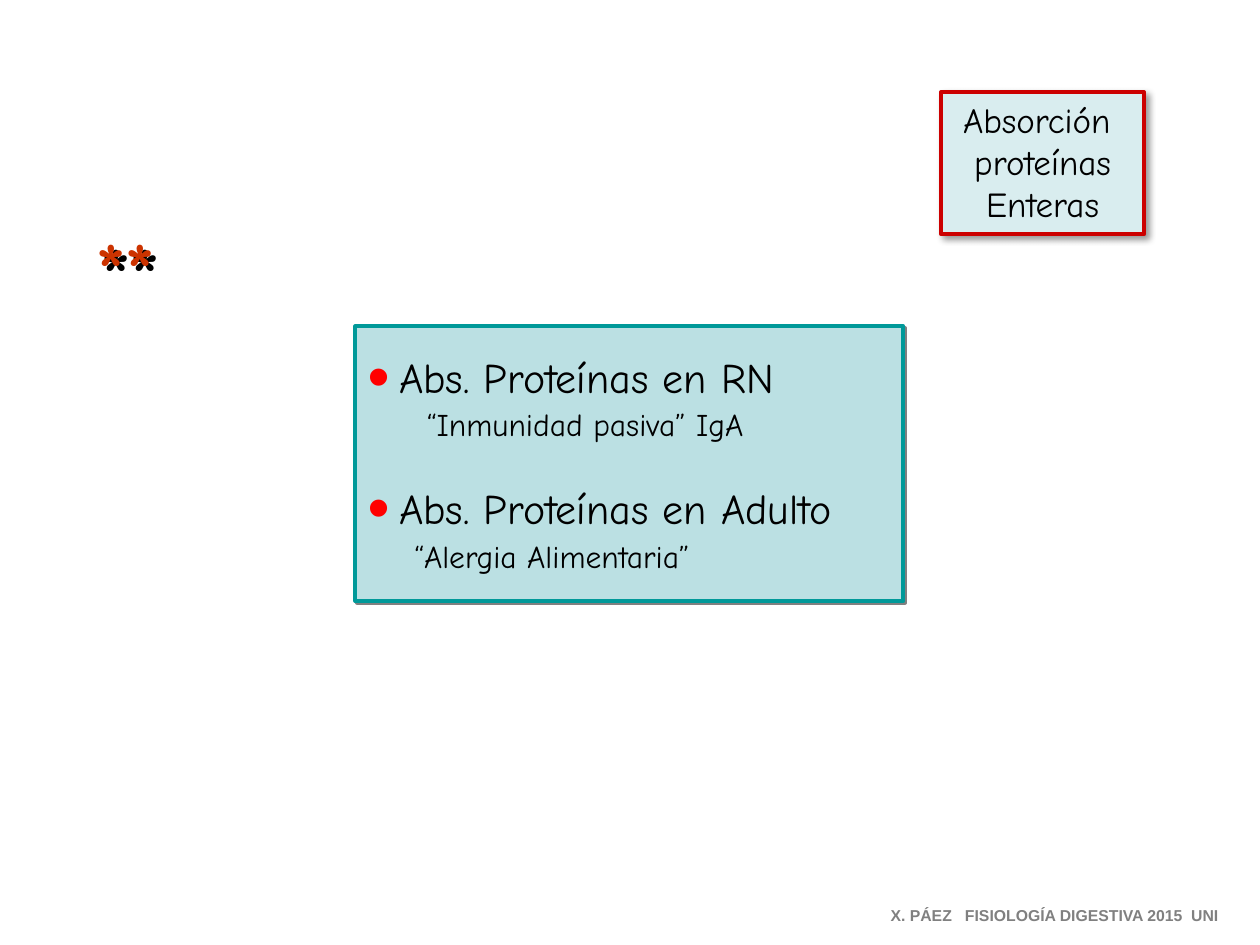
from dataclasses import dataclass

from lxml import etree
from pptx import Presentation, util as u
from pptx.dml import color
from pptx.enum import shapes, text
from pptx.oxml import ns

HAND_FONT = "Comic Neue"


@dataclass(frozen=True)
class Shadow:
    """Outer shadow at 45 degrees, with lengths in points."""
    hex_color: str
    opacity: int
    blur: float
    distance: float


@dataclass(frozen=True)
class Line:
    """One paragraph with its type and spacing."""
    words: str
    size: float
    font: str = HAND_FONT
    hex_color: str = "000000"
    bold: bool = False
    centered: bool = False
    bullet: bool = False
    indent: float = 0
    space_before: float = 0


@dataclass(frozen=True)
class Box:
    """A rectangle or text box, placed in inches."""
    left: float
    top: float
    width: float
    height: float
    lines: tuple[Line, ...]
    fill: str | None = None
    border: str | None = None
    shadow: Shadow | None = None
    top_inset: float = 0.05
    wrap: bool = True


def rgb(hex_color: str) -> color.RGBColor:
    """Turn a hex string into a colour."""
    return color.RGBColor.from_string(hex_color)


def add_child(parent, tag: str, **attributes):
    """Append a DrawingML element."""
    return etree.SubElement(parent, ns.qn(f"a:{tag}"), {key: str(value) for key, value in attributes.items()})


def add_shadow(shape, shadow: Shadow) -> None:
    """Give a shape an outer shadow."""
    shape.shadow.inherit = False
    effects = shape._element.spPr.find(ns.qn("a:effectLst"))
    outer = add_child(effects, "outerShdw", blurRad=u.Pt(shadow.blur), dist=u.Pt(shadow.distance),
                      dir=45 * 60000, algn="tl", rotWithShape=0)
    shade = add_child(outer, "srgbClr", val=shadow.hex_color)
    add_child(shade, "alpha", val=shadow.opacity * 1000)


def write_line(paragraph, line: Line) -> None:
    """Write one line into a paragraph."""
    paragraph.alignment = text.PP_ALIGN.CENTER if line.centered else text.PP_ALIGN.LEFT
    paragraph.space_before = u.Pt(line.space_before)
    properties = paragraph._p.get_or_add_pPr()
    properties.set("marL", str(u.Inches(line.indent)))
    properties.set("indent", str(-u.Inches(line.indent) if line.bullet else 0))
    if line.bullet:
        add_child(add_child(properties, "buClr"), "srgbClr", val="FF0000")
        add_child(properties, "buSzPct", val=150000)
        add_child(properties, "buFont", typeface="Arial")
        add_child(properties, "buChar", char="•")
    run = paragraph.add_run()
    run.text = line.words
    run.font.name = line.font
    run.font.size = u.Pt(line.size)
    run.font.bold = line.bold
    run.font.color.rgb = rgb(line.hex_color)


def draw_box(slide, box: Box) -> None:
    """Draw a box with its text."""
    place = [u.Inches(length) for length in (box.left, box.top, box.width, box.height)]
    if box.fill:
        shape = slide.shapes.add_shape(shapes.MSO_SHAPE.RECTANGLE, *place)
        shape.fill.solid()
        shape.fill.fore_color.rgb = rgb(box.fill)
        shape.line.color.rgb = rgb(box.border)
        shape.line.width = u.Pt(2.25)
    else:
        shape = slide.shapes.add_textbox(*place)
    if box.shadow:
        add_shadow(shape, box.shadow)
    frame = shape.text_frame
    frame.word_wrap = box.wrap
    frame.vertical_anchor = text.MSO_ANCHOR.TOP
    frame.margin_top = u.Inches(box.top_inset)
    for index, line in enumerate(box.lines):
        write_line(frame.add_paragraph() if index else frame.paragraphs[0], line)


TITLE = Box(7.47, 0.73, 1.61, 1.13,
            tuple(Line(words, 20, centered=True) for words in ("Absorción ", "proteínas", "Enteras")),
            "D9EDEF", "CC0000", Shadow("000000", 40, 4, 3))
TOPICS = Box(2.82, 2.59, 4.35, 2.18, (
    Line("Abs. Proteínas en RN", 24, bullet=True, indent=0.25),
    Line("“Inmunidad pasiva” IgA", 18, indent=0.47, space_before=2),
    Line("Abs. Proteínas en Adulto", 24, bullet=True, indent=0.25, space_before=22.5),
    Line("“Alergia Alimentaria”", 18, indent=0.37, space_before=2),
), "BBE0E3", "009999", Shadow("808080", 100, 0, 1.4), top_inset=0.2)
ASTERISKS = Box(0.67, 1.7, 0.87, 0.83, (Line("**", 44, hex_color="CC3300", bold=True),),
                shadow=Shadow("000000", 100, 0, 4))
FOOTER = Box(6.97, 7.14, 2.9, 0.25, (
    Line("X. PÁEZ   FISIOLOGÍA DIGESTIVA 2015  UNI", 9, "Arial", "808080", True),), wrap=False)


def main() -> None:
    """Build and save the slide."""
    presentation = Presentation()
    presentation.slide_width = u.Inches(10)
    presentation.slide_height = u.Inches(7.5)
    slide = presentation.slides.add_slide(presentation.slide_layouts[6])
    for box in (TITLE, TOPICS, ASTERISKS, FOOTER):
        draw_box(slide, box)
    presentation.save("out.pptx")


if __name__ == "__main__":
    main()
